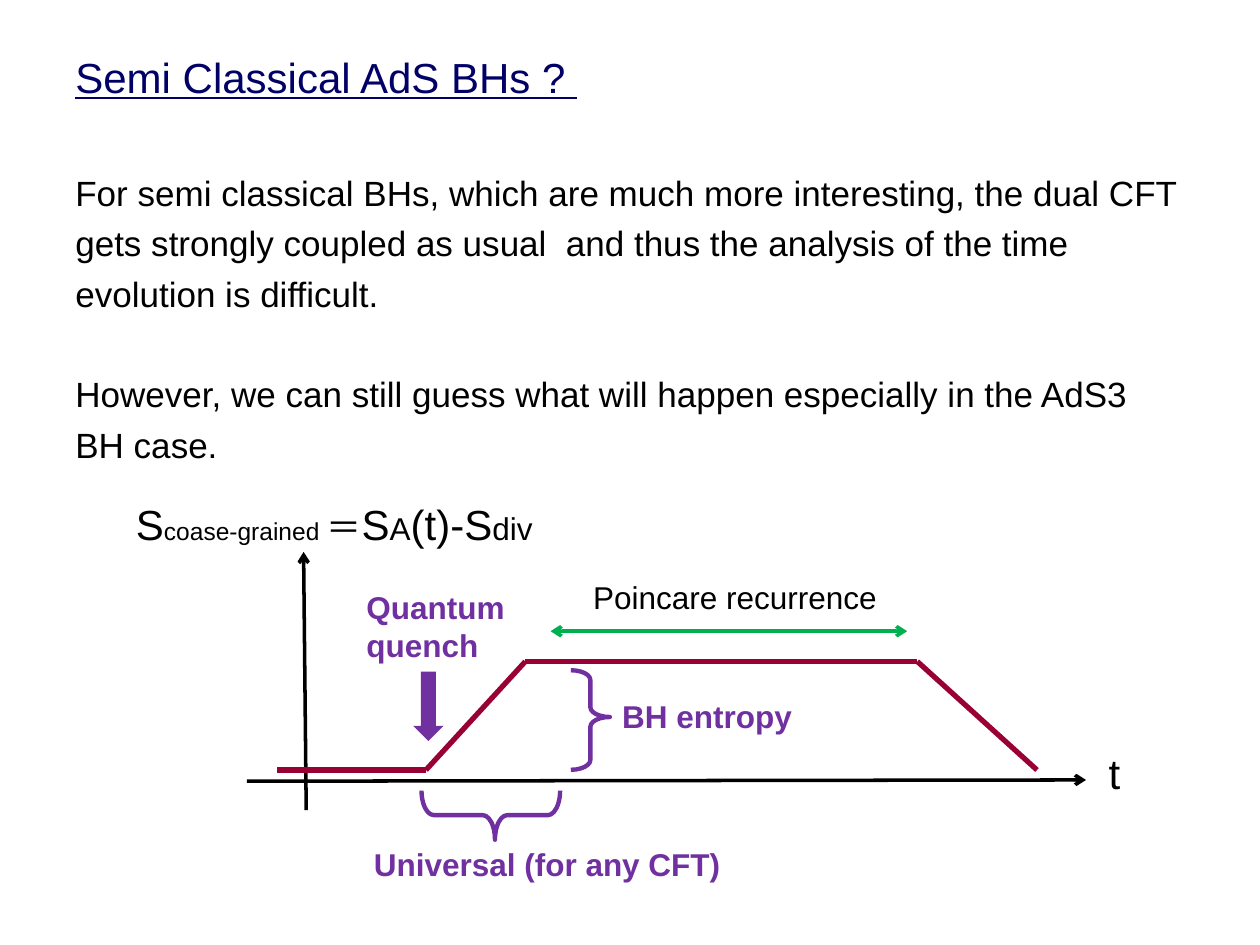
from typing import NamedTuple

from lxml.etree import SubElement
from pptx import Presentation
from pptx.dml.color import RGBColor
from pptx.enum.shapes import MSO_CONNECTOR, MSO_SHAPE
from pptx.oxml.ns import qn
from pptx.util import Pt

FONT = "Arial"
COLORS = {
    "title": "000066",
    "ink": "000000",
    "curve": "990033",
    "accent": "7030A0",
    "recurrence": "00B050",
}


class Run(NamedTuple):
    text: str
    size: float


class Line(NamedTuple):
    runs: list[Run]
    before: float = 0
    color: str = "ink"
    underline: bool = False


class Label(NamedTuple):
    lines: list[str]
    left: float
    top: float
    width: float
    height: float
    color: str = "accent"
    bold: bool = True
    size: float = 18


class Stroke(NamedTuple):
    start: tuple[float, float]
    end: tuple[float, float]
    color: str
    weight: float
    head: bool = False
    tail: bool = False


class Brace(NamedTuple):
    left: float
    top: float
    width: float
    height: float
    rotation: float = 0


def rgb(color: str) -> RGBColor:
    return RGBColor.from_string(COLORS[color])


def add_text(slide, lines: list[Line], *, left: float, top: float, width: float,
             height: float, bold: bool = False, wrap: bool = False) -> None:
    box = slide.shapes.add_textbox(Pt(left), Pt(top), Pt(width), Pt(height))
    frame = box.text_frame
    frame.word_wrap = wrap
    for index, line in enumerate(lines):
        paragraph = frame.add_paragraph() if index else frame.paragraphs[0]
        paragraph.space_before = Pt(line.before)
        for text, size in line.runs:
            run = paragraph.add_run()
            run.text = text
            run.font.name = FONT
            run.font.size = Pt(size)
            run.font.bold = bold
            run.font.underline = line.underline
            run.font.color.rgb = rgb(line.color)


def add_label(slide, label: Label) -> None:
    lines = [Line([Run(text, label.size)], color=label.color) for text in label.lines]
    add_text(slide, lines, left=label.left, top=label.top, width=label.width,
             height=label.height, bold=label.bold)


def add_stroke(slide, stroke: Stroke) -> None:
    connector = slide.shapes.add_connector(
        MSO_CONNECTOR.STRAIGHT, *map(Pt, stroke.start + stroke.end))
    connector.line.color.rgb = rgb(stroke.color)
    connector.line.width = Pt(stroke.weight)
    outline = connector.line._get_or_add_ln()
    for tag, shown in (("a:headEnd", stroke.head), ("a:tailEnd", stroke.tail)):
        if shown:
            SubElement(outline, qn(tag), type="arrow")
    SubElement(connector._element.spPr, qn("a:effectLst"))


def add_brace(slide, brace: Brace) -> None:
    shape = slide.shapes.add_shape(
        MSO_SHAPE.RIGHT_BRACE, Pt(brace.left), Pt(brace.top),
        Pt(brace.width), Pt(brace.height))
    shape.adjustments[0] = 0.25
    shape.adjustments[1] = 0.47
    shape.rotation = brace.rotation
    shape.shadow.inherit = False
    shape.fill.background()
    shape.line.color.rgb = rgb("accent")
    shape.line.width = Pt(2.5)


def add_quench_arrow(slide) -> None:
    arrow = slide.shapes.add_shape(
        MSO_SHAPE.DOWN_ARROW, Pt(236.2), Pt(383.8), Pt(17.3), Pt(39.6))
    arrow.shadow.inherit = False
    arrow.fill.solid()
    arrow.fill.fore_color.rgb = rgb("accent")
    arrow.line.fill.background()


NEXT_LINE, NEW_BLOCK = 5, 33
BODY = [
    Line([Run("Semi Classical AdS BHs ? ", 24)], 3, "title", True),
    Line([Run("For semi classical BHs, which are much more interesting, the dual CFT", 20)], 39.5),
    Line([Run("gets strongly coupled as usual  and thus the analysis of the time", 20)], NEXT_LINE),
    Line([Run("evolution is difficult.", 20)], NEXT_LINE),
    Line([Run("However, we can still guess what will happen especially in the AdS3", 20)], NEW_BLOCK),
    Line([Run("BH case.", 20)], NEXT_LINE),
]
ENTROPY = [Line([
    Run("S", 24), Run("coase-grained ", 14), Run("＝", 20), Run("S", 24),
    Run("A", 18), Run("(t)-S", 24), Run("div", 18),
])]
LABELS = [
    Label(["t"], 626.4, 423.4, 21.6, 36.7, "ink", False, 24),
    Label(["Quantum", "quench"], 202.3, 332.6, 99.4, 51.1),
    Label(["BH entropy"], 348.5, 394.6, 112.3, 28.8),
    Label(["Universal (for any CFT)"], 206.6, 479.5, 214.6, 28.8),
    Label(["Poincare recurrence"], 331.9, 326.9, 177.8, 28.8, "ink", False),
]
CURVE = [(158.4, 440), (243.4, 440), (300.2, 378), (524.2, 378), (592.6, 440)]
STROKES = [
    Stroke((175, 463), (173.5, 315.4), "ink", 2, tail=True),
    Stroke((141.1, 446.4), (620.6, 445.7), "ink", 2, tail=True),
    *(Stroke(start, end, "curve", 3) for start, end in zip(CURVE, CURVE[1:])),
    Stroke((314.6, 360.7), (518.4, 360.7), "recurrence", 2, head=True, tail=True),
]
BRACES = [
    Brace(326.2, 383, 22.3, 56.9),
    Brace(266.4, 426.2, 28.1, 79.2, 90),
]


def main() -> None:
    deck = Presentation()
    deck.slide_width, deck.slide_height = Pt(720), Pt(540)
    slide = deck.slides.add_slide(deck.slide_layouts[6])
    add_text(slide, BODY, left=36, top=25.9, width=648, height=456.5, wrap=True)
    add_text(slide, ENTROPY, left=70.6, top=281.5, width=242.6, height=36, wrap=True)
    for stroke in STROKES:
        add_stroke(slide, stroke)
    for brace in BRACES:
        add_brace(slide, brace)
    add_quench_arrow(slide)
    for label in LABELS:
        add_label(slide, label)
    deck.save("out.pptx")


if __name__ == "__main__":
    main()
